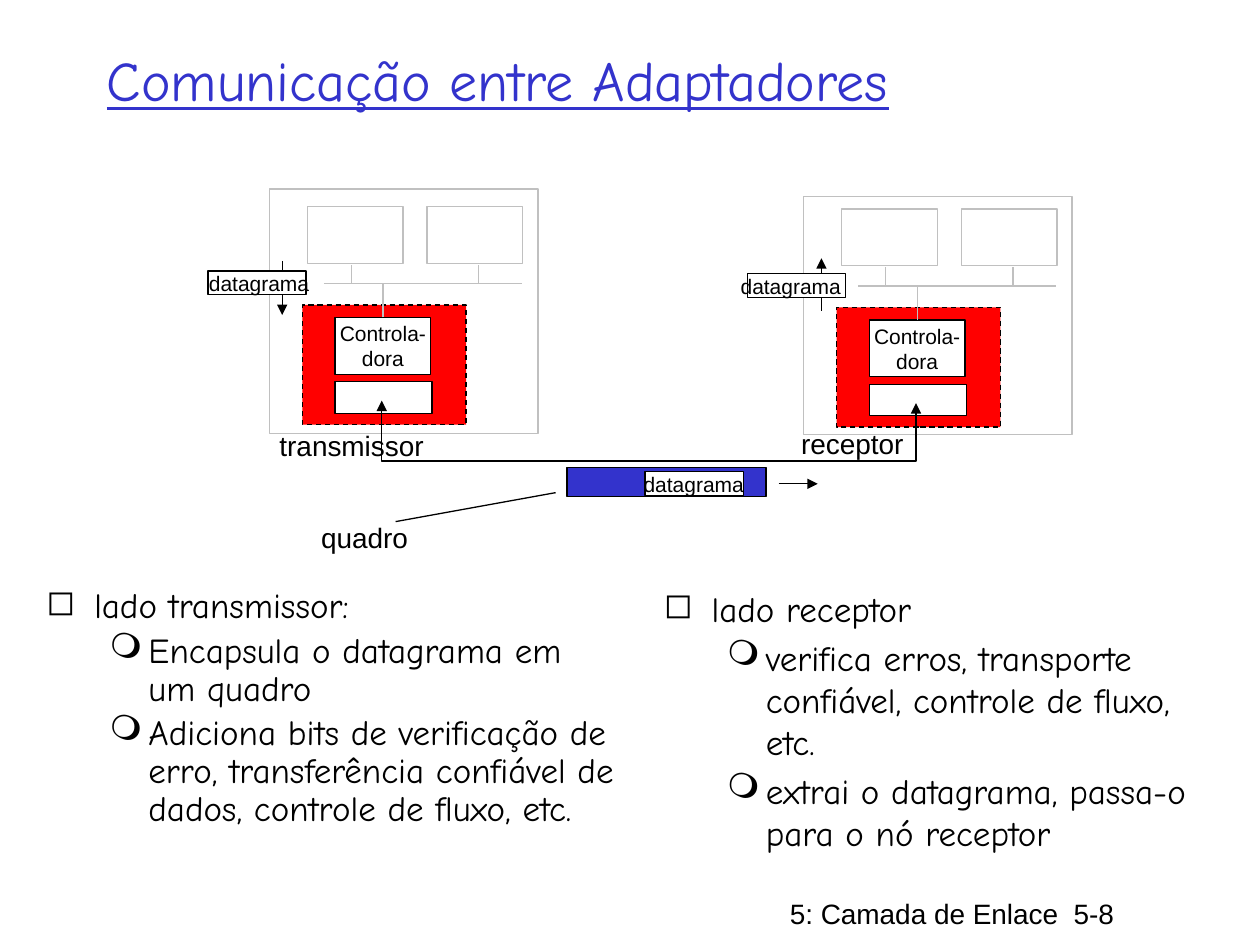
from lxml.etree import SubElement
from pptx import Presentation
from pptx.dml.color import RGBColor
from pptx.enum.dml import MSO_LINE
from pptx.enum.shapes import MSO_CONNECTOR, MSO_SHAPE
from pptx.enum.text import MSO_ANCHOR, PP_ALIGN
from pptx.oxml.ns import qn
from pptx.util import Inches, Pt

BLACK = RGBColor(0x00, 0x00, 0x00)
WHITE = RGBColor(0xFF, 0xFF, 0xFF)
BLUE = RGBColor(0x33, 0x33, 0xCC)
RED = RGBColor(0xFF, 0x00, 0x00)
GRAY = RGBColor(0xC0, 0xC0, 0xC0)
LINE_WIDTH = Pt(0.75)
BODY_FONT = "Comic Neue"
LABEL_FONT = "Arial"


def format_line(line, color, arrows=()):
    line.color.rgb = color
    line.width = LINE_WIDTH
    for end in arrows:
        SubElement(line._get_or_add_ln(), qn(f"a:{end}"), type="triangle")


def write(para, text, size=16, font=LABEL_FONT, color=BLACK, underline=None):
    span = para.add_run()
    span.text = text
    span.font.size = Pt(size)
    span.font.name = font
    span.font.color.rgb = color
    span.font.underline = underline


def add_text(page, text, left, top, width, height=0.37, wrap=False,
             anchor=MSO_ANCHOR.TOP, **style):
    box = page.shapes.add_textbox(*map(Inches, (left, top, width, height)))
    box.text_frame.word_wrap = wrap
    box.text_frame.vertical_anchor = anchor
    write(box.text_frame.paragraphs[0], text, **style)


def add_box(page, left, top, width, height, fill=WHITE, line=BLACK, dash=None):
    box = page.shapes.add_shape(
        MSO_SHAPE.RECTANGLE, *map(Inches, (left, top, width, height)))
    box.shadow.inherit = False
    box.fill.solid()
    box.fill.fore_color.rgb = fill
    format_line(box.line, line)
    if dash:
        box.line.dash_style = dash
    return box


def add_line(page, x1, y1, x2, y2, color=BLACK, arrows=()):
    line = page.shapes.add_connector(
        MSO_CONNECTOR.STRAIGHT, *map(Inches, (x1, y1, x2, y2)))
    format_line(line.line, color, arrows)
    SubElement(line._element.spPr, qn("a:effectLst"))
    return line


def add_bullets(page, left, top, width, height, items, spacing):
    box = page.shapes.add_textbox(*map(Inches, (left, top, width, height)))
    frame = box.text_frame
    frame.word_wrap = True
    for index, text in enumerate(items):
        para = frame.paragraphs[0] if index == 0 else frame.add_paragraph()
        margin, indent, mark = (
            (0.38, -0.38, "◻") if index == 0 else (0.81, -0.31, "❍"))
        para.level = min(index, 1)
        para.line_spacing = spacing
        para.space_before = Pt(4)
        props = para._p.get_or_add_pPr()
        props.set("marL", str(Inches(margin)))
        props.set("indent", str(Inches(indent)))
        SubElement(props, qn("a:buChar"), char=mark)
        write(para, text, size=20, font=BODY_FONT)


def add_host(page, left, top, frame_top, frame_height):
    """Draw a host; left and top locate its first upper box."""
    add_box(page, left - 0.3, frame_top, 2.13, frame_height, line=GRAY)
    # Adapter card with its controller
    add_box(page, left - 0.04, top + 0.78, 1.3, 0.95, RED, dash=MSO_LINE.DASH)
    add_box(page, left + 0.22, top + 1.39, 0.77, 0.25)
    controller = add_box(page, left + 0.22, top + 0.88, 0.76, 0.45)
    frame = controller.text_frame
    frame.word_wrap = False
    frame.vertical_anchor = MSO_ANCHOR.MIDDLE
    for para, text in ((frame.paragraphs[0], "Controla-"),
                       (frame.add_paragraph(), "dora")):
        para.alignment = PP_ALIGN.CENTER
        write(para, text, size=12)
    # Bus and the parts attached to it
    bus = top + 0.61
    add_line(page, left + 0.13, bus, left + 1.7, bus, GRAY)
    stub = add_line(page, left + 0.6, top + 0.88, left + 0.6, bus, GRAY)
    stub.begin_connect(controller, 0)
    stub.end_x = stub.begin_x
    for box_x, stub_x in ((0, 0.35), (0.95, 1.36)):
        add_box(page, left + box_x, top, 0.76, 0.45, line=GRAY)
        add_line(page, left + stub_x, bus, left + stub_x, top + 0.46, GRAY)


def add_datagram(page, left, top, text_left):
    add_box(page, left, top, 0.78, 0.19)
    add_text(page, "datagrama", text_left, top - 0.05, 1, 0.3, size=12)


def add_link(page, points):
    (start, *rest) = [tuple(map(Inches, point)) for point in points]
    builder = page.shapes.build_freeform(*start)
    builder.add_line_segments(rest, close=False)
    link = builder.convert_to_shape()
    link.shadow.inherit = False
    link.fill.background()
    format_line(link.line, BLACK, ("headEnd", "tailEnd"))


def main():
    deck = Presentation()
    deck.slide_width, deck.slide_height = Inches(10), Inches(7.5)
    page = deck.slides.add_slide(deck.slide_layouts[6])

    # Footer and title
    add_text(page, "5: Camada de Enlace  5-8", 6.17, 7.07, 3.83, wrap=True)
    add_text(page, "Comunicação entre Adaptadores", 0.75, 0.17, 8.5, 0.92,
             wrap=True, anchor=MSO_ANCHOR.MIDDLE, size=32, font=BODY_FONT,
             color=BLUE, underline=True)

    # Explanations
    add_bullets(page, 0.27, 4.62, 4.73, 2.21, [
        "lado transmissor:",
        "Encapsula o datagrama em um quadro",
        "Adiciona bits de verificação de erro, transferência confiável de "
        "dados, controle de fluxo, etc.",
    ], spacing=0.9)
    add_bullets(page, 5.17, 4.61, 4.47, 2.21, [
        "lado receptor",
        "verifica erros, transporte confiável, controle de fluxo, etc.",
        "extrai o datagrama, passa-o para o nó receptor",
    ], spacing=1.0)

    # Sender and receiver
    add_host(page, 2.44, 1.64, 1.5, 1.94)
    add_host(page, 6.68, 1.66, 1.56, 1.89)
    add_text(page, "transmissor", 2.12, 3.35, 1.36)
    add_text(page, "receptor", 6.26, 3.34, 1.03)

    # Datagrams going down and up
    add_line(page, 2.24, 2.07, 2.24, 2.5, arrows=["tailEnd"])
    add_datagram(page, 1.65, 2.15, 1.56)
    add_line(page, 6.52, 2.05, 6.52, 2.47, arrows=["headEnd"])
    add_datagram(page, 5.93, 2.17, 5.78)

    # Link and the frame sent over it
    add_link(page, [(3.03, 3.18), (3.03, 3.66), (7.27, 3.66), (7.27, 3.2)])
    add_box(page, 4.5, 3.71, 1.58, 0.23, BLUE)
    add_datagram(page, 5.12, 3.74, 5.01)
    add_line(page, 6.18, 3.84, 6.49, 3.84, arrows=["tailEnd"])
    add_text(page, "quadro", 2.45, 4.08, 0.9)
    add_line(page, 3.14, 4.14, 4.41, 3.91)

    deck.save("out.pptx")


if __name__ == "__main__":
    main()
